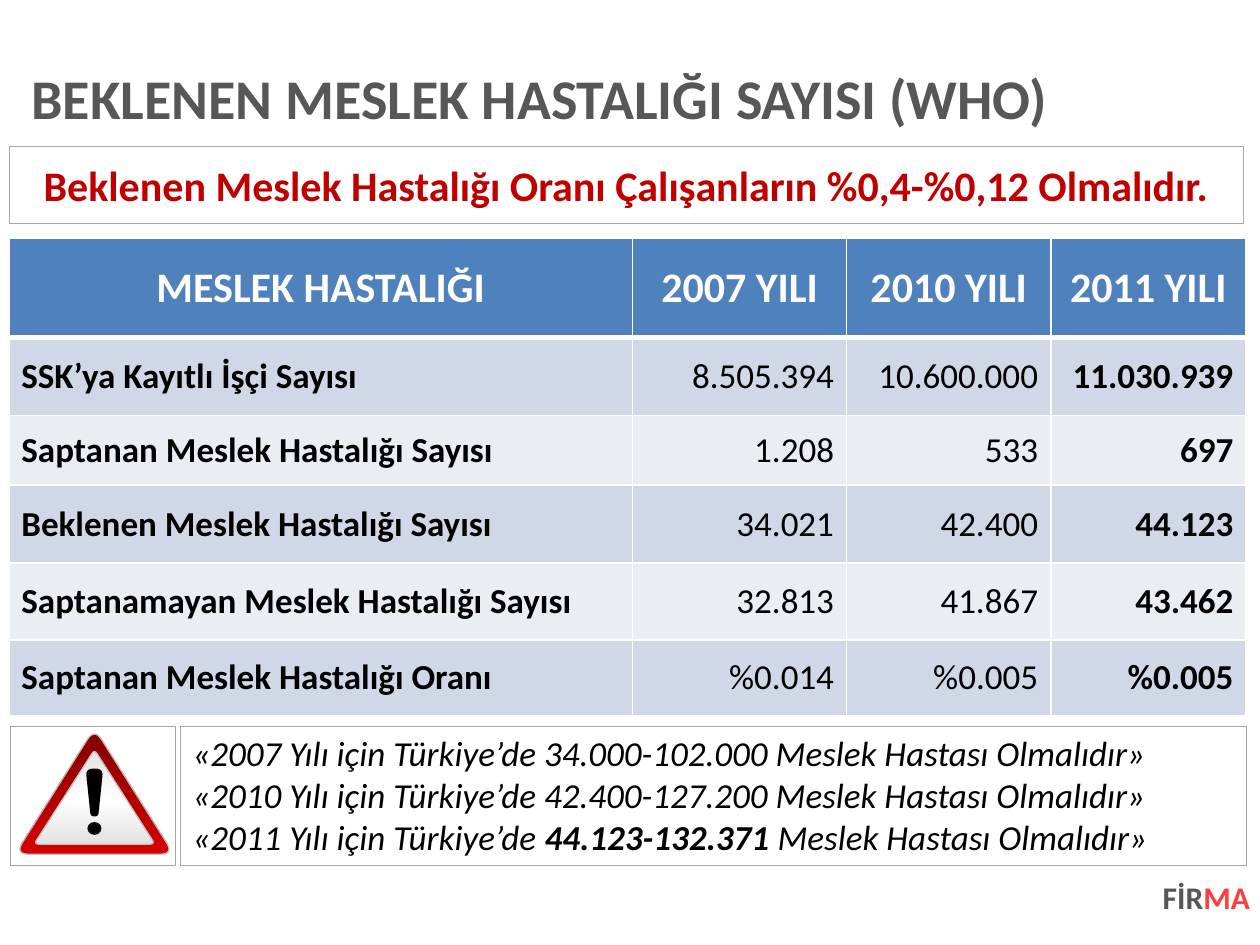
import copy
import math

import pptx
import pptx.dml.color
import pptx.enum.shapes
import pptx.enum.text
import pptx.oxml
import pptx.oxml.ns
import pptx.util

Inches = pptx.util.Inches
Pt = pptx.util.Pt
RGBColor = pptx.dml.color.RGBColor
ALIGN = pptx.enum.text.PP_ALIGN
ANCHOR = pptx.enum.text.MSO_ANCHOR
SHAPE = pptx.enum.shapes.MSO_SHAPE

FONT = "Calibri"
WHITE = RGBColor(0xFF, 0xFF, 0xFF)
BLACK = RGBColor(0, 0, 0)
GREY = RGBColor(0x57, 0x57, 0x57)
FRAME_GREY = RGBColor(0xA6, 0xA6, 0xA6)
SIGN_EDGE = RGBColor(0xC0, 0xC0, 0xC0)
SIGN_GREY = RGBColor(0xE3, 0xE3, 0xE3)
DOT_EDGE = RGBColor(0x16, 0x13, 0x16)
DARK_RED = RGBColor(0x86, 0, 0)
BRIGHT_RED = RGBColor(0xD6, 0, 0)
RED = RGBColor(0xC0, 0, 0)
LIGHT_RED = RGBColor(0xFB, 0x3E, 0x3E)
HEADER_BLUE = RGBColor(0x4F, 0x81, 0xBD)
BANDS = [RGBColor(0xE9, 0xED, 0xF4), RGBColor(0xD0, 0xD8, 0xE8)]

COLUMN_WIDTHS = [4.95, 1.7, 1.62, 1.55]
ROW_HEIGHTS = [0.79, 0.62, 0.55, 0.62, 0.61, 0.6]
ROWS = [
    ["MESLEK HASTALIĞI", "2007 YILI", "2010 YILI", "2011 YILI"],
    ["SSK’ya Kayıtlı İşçi Sayısı", "8.505.394", "10.600.000", "11.030.939"],
    ["Saptanan Meslek Hastalığı Sayısı", "1.208", "533", "697"],
    ["Beklenen Meslek Hastalığı Sayısı", "34.021", "42.400", "44.123"],
    ["Saptanamayan Meslek Hastalığı Sayısı", "32.813", "41.867", "43.462"],
    ["Saptanan Meslek Hastalığı Oranı", "%0.014", "%0.005", "%0.005"],
]


def rounded_outline(corners, steps=8):
    """Points, in EMU, of a polygon whose (x, y, cut) corners are bent into curves."""
    points = []
    for i, (x, y, cut) in enumerate(corners):
        ends = []
        for nx, ny, _ in (corners[i - 1], corners[(i + 1) % len(corners)]):
            share = cut / math.hypot(nx - x, ny - y)
            ends.append((x + (nx - x) * share, y + (ny - y) * share))
        (ax, ay), (bx, by) = ends
        for step in range(steps + 1):
            t = step / steps
            a, c, b = (1 - t) ** 2, 2 * t * (1 - t), t ** 2
            points.append((Inches(a * ax + c * x + b * bx),
                           Inches(a * ay + c * y + b * by)))
    return points


class SlideBuilder:
    def __init__(self, slide, font=FONT):
        self.slide = slide
        self.font = font

    def style(self, paragraph, size, color, bold=False, italic=False, align=ALIGN.LEFT):
        paragraph.alignment = align
        for run in paragraph.runs:
            font = run.font
            font.name, font.size = self.font, Pt(size)
            font.bold, font.italic = bold, italic
            font.color.rgb = color

    def margins(self, frame, side, top):
        frame.margin_left = frame.margin_right = Inches(side)
        frame.margin_top = frame.margin_bottom = Inches(top)
        frame.word_wrap = True

    def title(self, text, box):
        heading = self.slide.shapes.title
        heading.left, heading.top, heading.width, heading.height = map(Inches, box)
        frame = heading.text_frame
        frame.text = text
        self.margins(frame, 0, 0.05)
        frame.vertical_anchor = ANCHOR.MIDDLE
        frame.paragraphs[0].line_spacing = 0.9
        self.style(frame.paragraphs[0], 32, GREY, bold=True)

    def paint(self, shape, fill=None, edge=None, edge_width=0.75):
        """Fill with nothing, one colour or a list of colours from top to bottom."""
        shape.shadow.inherit = False
        if fill is None:
            shape.fill.background()
        elif isinstance(fill, list):
            shape.fill.gradient()
            shape.fill.gradient_angle = 270
            stop_list = shape.fill._fill._gradFill.gsLst
            while len(stop_list) < len(fill):
                stop_list.append(copy.deepcopy(stop_list[-1]))
            for i, (stop, color) in enumerate(zip(shape.fill.gradient_stops, fill)):
                stop.color.rgb = color
                stop.position = i / (len(fill) - 1)
        else:
            shape.fill.solid()
            shape.fill.fore_color.rgb = fill
        if edge is None:
            shape.line.fill.background()
        else:
            shape.line.color.rgb = edge
            shape.line.width = Pt(edge_width)
        return shape

    def preset(self, kind, box, **paint):
        return self.paint(self.slide.shapes.add_shape(kind, *map(Inches, box)), **paint)

    def frame(self, box, text="", size=20, color=BLACK, anchor=ANCHOR.MIDDLE, **style):
        shape = self.preset(SHAPE.RECTANGLE, box, edge=FRAME_GREY, edge_width=0.25)
        text_frame = shape.text_frame
        self.margins(text_frame, 0.1, 0.05)
        text_frame.vertical_anchor = anchor
        if text:
            text_frame.text = text
            for paragraph in text_frame.paragraphs:
                self.style(paragraph, size, color, **style)
        return text_frame

    def outline(self, corners, **paint):
        points = rounded_outline(corners)
        builder = self.slide.shapes.build_freeform(*points[0])
        builder.add_line_segments(points[1:], close=True)
        return self.paint(builder.convert_to_shape(), **paint)

    def wordmark(self, parts, box):
        frame = self.slide.shapes.add_textbox(*map(Inches, box)).text_frame
        self.margins(frame, 0, 0)
        paragraph = frame.paragraphs[0]
        for text, _ in parts:
            paragraph.add_run().text = text
        self.style(paragraph, 18, GREY, bold=True, align=ALIGN.RIGHT)
        for run, (_, color) in zip(paragraph.runs, parts):
            run.font.color.rgb = color

    def cell_borders(self, cell, widths):
        properties = cell._tc.get_or_add_tcPr()
        for side, width in zip("LRTB", widths):
            properties.append(pptx.oxml.parse_xml(
                f'<a:ln{side} {pptx.oxml.ns.nsdecls("a")} w="{Pt(width)}"><a:solidFill>'
                f'<a:srgbClr val="{WHITE}"/></a:solidFill></a:ln{side}>'))

    def table(self, rows, left, top, widths, heights):
        grid = self.slide.shapes.add_table(
            len(rows), len(widths), Inches(left), Inches(top),
            Inches(sum(widths)), Inches(sum(heights))).table
        for column, width in zip(grid.columns, widths):
            column.width = Inches(width)
        for r, values in enumerate(rows):
            grid.rows[r].height = Inches(heights[r])
            for c, value in enumerate(values):
                cell = grid.cell(r, c)
                cell.text = value
                cell.vertical_anchor = ANCHOR.MIDDLE
                self.cell_borders(cell, [1, 1, 3 if r == 1 else 1, 3 if r == 0 else 1])
                cell.fill.solid()
                cell.fill.fore_color.rgb = BANDS[r % 2] if r else HEADER_BLUE
                paragraph = cell.text_frame.paragraphs[0]
                if r == 0:
                    self.style(paragraph, 24, WHITE, bold=True, align=ALIGN.CENTER)
                else:
                    self.style(paragraph, 20, BLACK, bold=c in (0, len(widths) - 1),
                               align=ALIGN.RIGHT if c else ALIGN.LEFT)

    def warning_sign(self):
        self.outline([(0.75, 5.78, 0.11), (1.38, 6.78, 0.11), (0.12, 6.78, 0.11)],
                     fill=[DARK_RED, BRIGHT_RED], edge=SIGN_EDGE)
        self.outline([(0.75, 5.95, 0.04), (1.23, 6.7, 0.04), (0.27, 6.7, 0.04)],
                     fill=[SIGN_GREY, WHITE, SIGN_GREY], edge=SIGN_EDGE)
        self.outline([(0.68, 6.1, 0.06), (0.82, 6.1, 0.06),
                      (0.78, 6.48, 0.03), (0.72, 6.48, 0.03)], fill=BLACK)
        self.preset(SHAPE.OVAL, (0.7, 6.53, 0.1, 0.09),
                    fill=BLACK, edge=DOT_EDGE, edge_width=0.88)


def main():
    deck = pptx.Presentation()
    deck.slide_width, deck.slide_height = Inches(10), Inches(7.5)
    builder = SlideBuilder(deck.slides.add_slide(deck.slide_layouts[5]))

    builder.table(ROWS, 0.07, 1.89, COLUMN_WIDTHS, ROW_HEIGHTS)
    builder.title("BEKLENEN MESLEK HASTALIĞI SAYISI (WHO)", (0.25, 0.45, 9.64, 0.71))
    builder.frame((0.07, 1.16, 9.8, 0.61),
                  "Beklenen Meslek Hastalığı Oranı Çalışanların %0,4-%0,12 Olmalıdır.",
                  size=24, color=RED, bold=True, align=ALIGN.CENTER)

    estimates = [("2007", "34.000-102.000"), ("2010", "42.400-127.200"),
                 ("2011", "44.123-132.371")]
    quotes = builder.frame((1.43, 5.76, 8.46, 1.11), anchor=ANCHOR.TOP)
    for i, (year, span) in enumerate(estimates):
        quote = quotes.add_paragraph() if i else quotes.paragraphs[0]
        for text in (f"«{year} Yılı için Türkiye’de ", f"{span} ",
                     "Meslek Hastası Olmalıdır»"):
            quote.add_run().text = text
        builder.style(quote, 20, BLACK, italic=True)
    quotes.paragraphs[-1].runs[1].font.bold = True

    builder.frame((0.08, 5.76, 1.31, 1.11))
    builder.warning_sign()
    builder.wordmark([("FİR", GREY), ("MA", LIGHT_RED)], (9.12, 6.97, 0.8, 0.4))
    deck.save("out.pptx")


if __name__ == "__main__":
    main()
